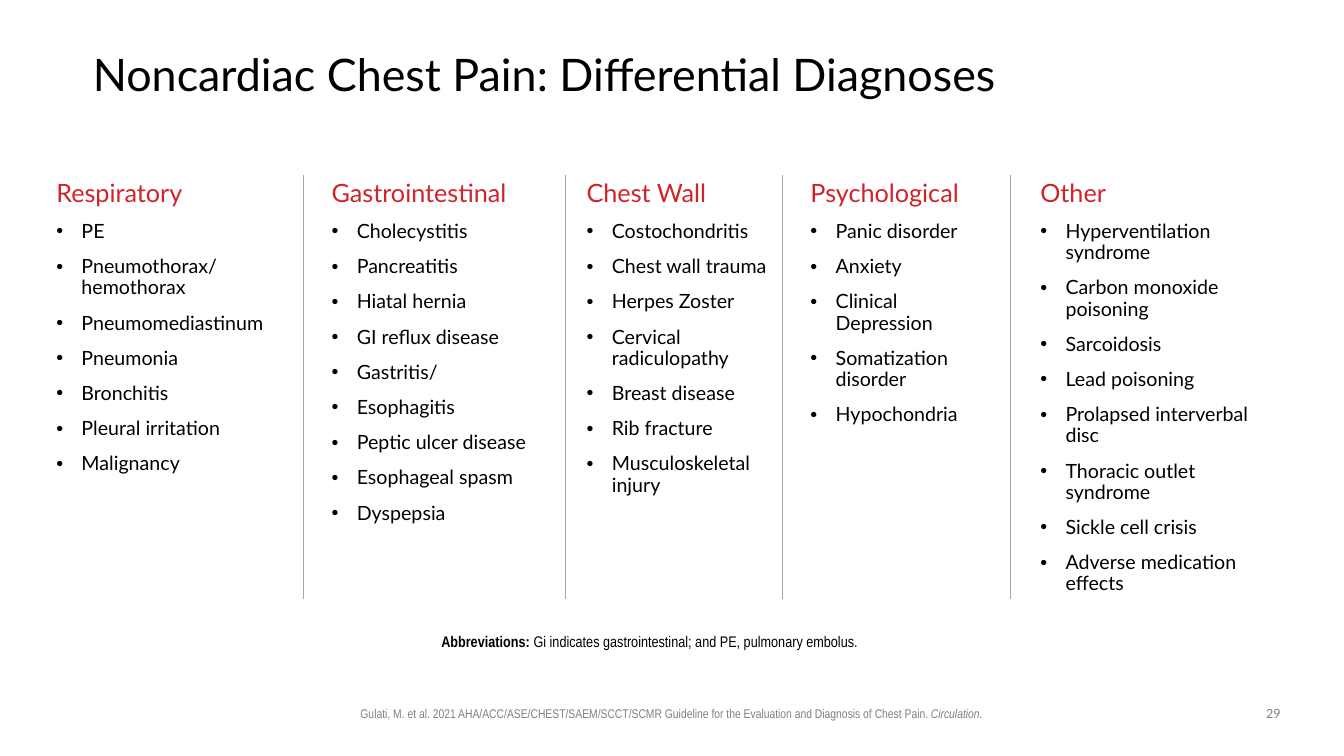
from lxml import etree
from pptx import Presentation
from pptx.dml.color import RGBColor
from pptx.enum.shapes import MSO_CONNECTOR
from pptx.enum.text import MSO_ANCHOR, MSO_AUTO_SIZE, PP_ALIGN
from pptx.oxml.ns import qn
from pptx.util import Inches, Pt

BLACK = RGBColor(0x00, 0x00, 0x00)
RED = RGBColor(0xCF, 0x24, 0x29)
GRAY = RGBColor(0x80, 0x80, 0x80)
RULE_GRAY = RGBColor(0xA6, 0xA6, 0xA6)
LATO = "Lato"
NARROW = "Arial Narrow"

TITLE = "Noncardiac Chest Pain: Differential Diagnoses"
COLUMNS = [
    ("Respiratory", 0.46, 2.52, 2.81, [
        "PE", "Pneumothorax/\nhemothorax", "Pneumomediastinum", "Pneumonia",
        "Bronchitis", "Pleural irritation", "Malignancy"]),
    ("Gastrointestinal", 3.19, 2.32, 2.81, [
        "Cholecystitis", "Pancreatitis", "Hiatal hernia", "GI reflux disease",
        "Gastritis/", "Esophagitis", "Peptic ulcer disease",
        "Esophageal spasm", "Dyspepsia"]),
    ("Chest Wall", 5.72, 2.03, 3.51, [
        "Costochondritis", "Chest wall trauma", "Herpes Zoster",
        "Cervical radiculopathy", "Breast disease", "Rib fracture",
        "Musculoskeletal injury"]),
    ("Psychological", 7.94, 2.03, 2.81, [
        "Panic disorder", "Anxiety", "Clinical Depression",
        "Somatization disorder", "Hypochondria"]),
    ("Other", 10.22, 2.3, 3.92, [
        "Hyperventilation syndrome", "Carbon monoxide poisoning",
        "Sarcoidosis", "Lead poisoning", "Prolapsed interverbal disc",
        "Thoracic outlet syndrome", "Sickle cell crisis",
        "Adverse medication effects"]),
]
DIVIDERS = [3.01, 5.61, 7.76, 10.02]
COLUMN_TOP, DIVIDER_BOTTOM = 1.74, 5.94
ABBREVIATIONS = ("Abbreviations: ",
                 "Gi indicates gastrointestinal; and PE, pulmonary embolus.")
CITATION = ("Gulati, M. et al. 2021 AHA/ACC/ASE/CHEST/SAEM/SCCT/SCMR Guideline "
            "for the Evaluation and Diagnosis of Chest Pain. ", "Circulation.")
PAGE_NUMBER = "29"


def add_text_box(slide, left, top, width, height):
    box = slide.shapes.add_textbox(
        Inches(left), Inches(top), Inches(width), Inches(height))
    box.text_frame.word_wrap = True
    return box.text_frame


def add_run(paragraph, text, font_name, size, color, bold=False, italic=False):
    for index, line in enumerate(text.split("\n")):
        if index:
            paragraph.add_line_break()
        run = paragraph.add_run()
        run.text = line
        run.font.name = font_name
        run.font.size = Pt(size)
        run.font.color.rgb = color
        run.font.bold = bold
        run.font.italic = italic


def add_bullet(paragraph):
    properties = paragraph._p.get_or_add_pPr()
    properties.set("marL", str(Inches(0.25)))
    properties.set("indent", str(-Inches(0.25)))
    etree.SubElement(properties, qn("a:buFont")).set("typeface", "Arial")
    etree.SubElement(properties, qn("a:buChar")).set("char", "•")


def add_column(slide, heading, left, width, height, diagnoses):
    frame = add_text_box(slide, left, COLUMN_TOP, width, height)
    paragraph = frame.paragraphs[0]
    paragraph.line_spacing = 0.9
    add_run(paragraph, heading, LATO, 18, RED)
    for diagnosis in diagnoses:
        paragraph = frame.add_paragraph()
        add_bullet(paragraph)
        paragraph.line_spacing = 0.9
        paragraph.space_before = Pt(10)
        add_run(paragraph, diagnosis, LATO, 14, BLACK)


def add_divider(slide, x):
    divider = slide.shapes.add_connector(
        MSO_CONNECTOR.STRAIGHT, Inches(x), Inches(COLUMN_TOP),
        Inches(x), Inches(DIVIDER_BOTTOM))
    divider.line.color.rgb = RULE_GRAY
    divider.line.width = Pt(0.5)
    etree.SubElement(divider._element.spPr, qn("a:effectLst"))


def set_title(slide):
    title = slide.shapes.title
    title.left, title.top = Inches(0.92), Inches(0.4)
    title.width, title.height = Inches(11.5), Inches(0.72)
    frame = title.text_frame
    frame.auto_size = MSO_AUTO_SIZE.NONE
    frame.vertical_anchor = MSO_ANCHOR.MIDDLE
    frame.margin_left = frame.margin_right = 0
    frame.margin_top = frame.margin_bottom = 0
    paragraph = frame.paragraphs[0]
    paragraph.alignment = PP_ALIGN.LEFT
    paragraph.line_spacing = 0.9
    add_run(paragraph, TITLE, LATO, 32, BLACK)


def add_notes_and_footer(slide):
    frame = add_text_box(slide, 1.28, 6.24, 10.43, 0.51)
    frame.margin_left = 0
    paragraph = frame.paragraphs[0]
    paragraph.alignment = PP_ALIGN.CENTER
    paragraph.line_spacing = 0.9
    add_run(paragraph, ABBREVIATIONS[0], NARROW, 11, BLACK, bold=True)
    add_run(paragraph, ABBREVIATIONS[1], NARROW, 11, BLACK)

    paragraph = add_text_box(slide, 3.17, 6.95, 6.98, 0.25).paragraphs[0]
    paragraph.alignment = PP_ALIGN.CENTER
    add_run(paragraph, CITATION[0], NARROW, 9, GRAY)
    add_run(paragraph, CITATION[1], NARROW, 9, GRAY, italic=True)

    paragraph = add_text_box(slide, 12.42, 6.95, 0.42, 0.26).paragraphs[0]
    paragraph.alignment = PP_ALIGN.CENTER
    add_run(paragraph, PAGE_NUMBER, LATO, 9, GRAY)


def main():
    presentation = Presentation()
    presentation.slide_width = Inches(13.33)
    presentation.slide_height = Inches(7.5)
    slide = presentation.slides.add_slide(presentation.slide_layouts[5])
    set_title(slide)
    for column in COLUMNS:
        add_column(slide, *column)
    for x in DIVIDERS:
        add_divider(slide, x)
    add_notes_and_footer(slide)
    presentation.save("out.pptx")


if __name__ == "__main__":
    main()
